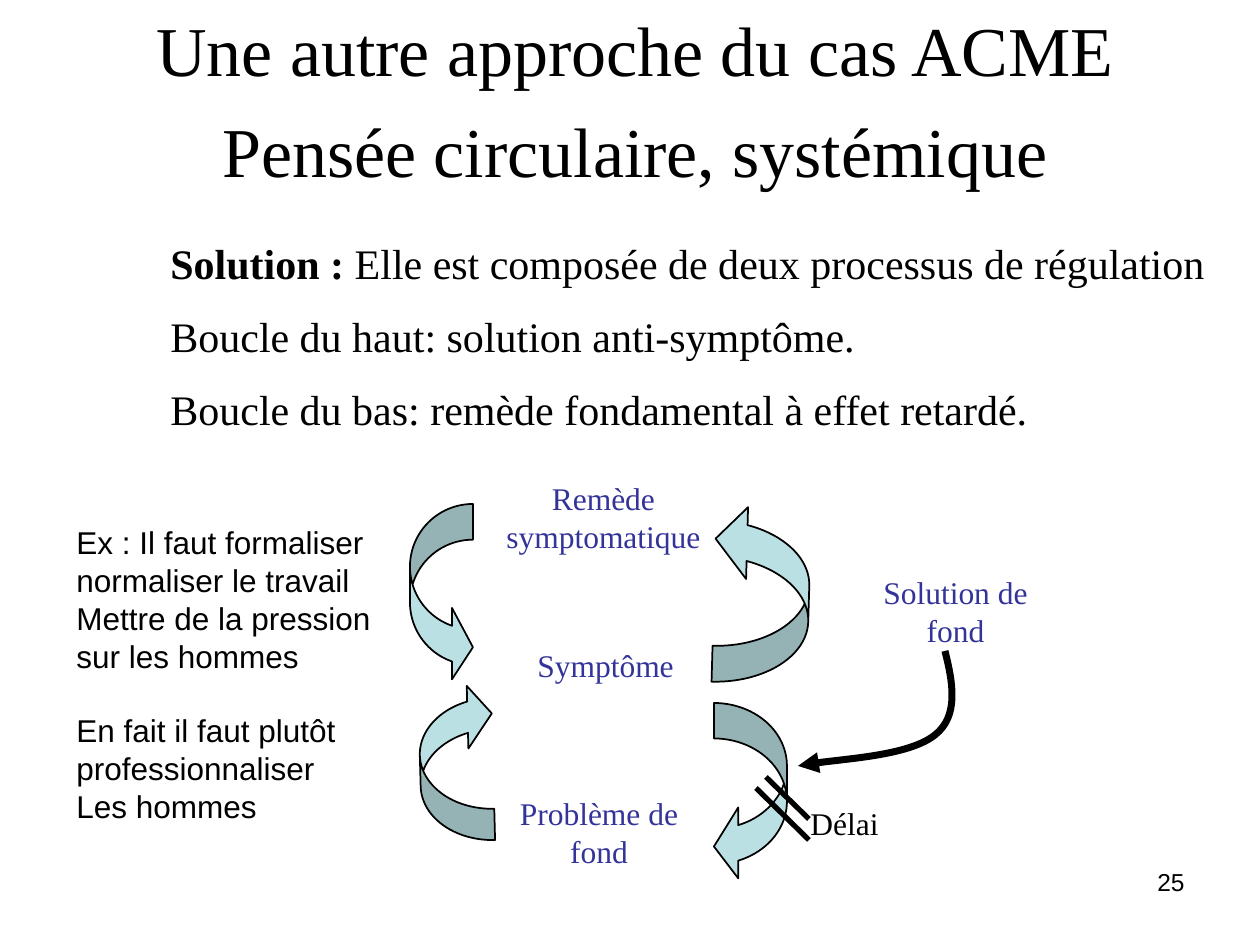
import pptx
import pptx.util
import pptx.dml.color
import pptx.enum.shapes
import pptx.enum.text
import pptx.oxml
import pptx.oxml.ns

SCALE = 914400 / 126  # EMU in one px
COLORS = {"text": "000000", "label": "333399", "arrow": "BBE0E3", "background": "FFFFFF"}
SERIF, SANS = "Times New Roman", "Arial"
ALIGN = pptx.enum.text.PP_ALIGN
SHAPE = pptx.enum.shapes.MSO_SHAPE

# Content: places are left, top, width, height in px
TITLE = ["Une autre approche du cas ACME", "Pensée circulaire, systémique"]
TITLE_PLACE = (35, 0, 1200, 158)

SOLUTION = [
    [("Solution :", True), (" Elle est composée de deux processus de régulation", False)],
    [("Boucle du haut: solution anti-symptôme.", False)],
    [("Boucle du bas: remède fondamental à effet retardé.", False)],
]
SOLUTION_PLACE = (158, 231, 1102, 214)

LABELS = [
    ("Symptôme", (525, 640, 189, 50), ALIGN.LEFT, "label"),
    ("Remède symptomatique", (451, 473, 305, 88), ALIGN.CENTER, "label"),
    ("Problème de fond", (494, 788, 210, 88), ALIGN.CENTER, "label"),
    ("Solution de fond", (840, 567, 231, 88), ALIGN.CENTER, "label"),
    ("Délai", (798, 798, 158, 50), ALIGN.LEFT, "text"),
]

EXAMPLE_GROUPS = [
    ["Ex : Il faut formaliser", "normaliser le travail",
     "Mettre de la pression", "sur les hommes"],
    ["En fait il faut plutôt", "professionnaliser", "Les hommes"],
]
EXAMPLE_PLACE = (64, 517, 323, 318)
NUMBER, NUMBER_PLACE = "25", (903, 861, 294, 66)

# Kind, place, rotation, adjustments
LOOP_ARROWS = [
    (SHAPE.CURVED_RIGHT_ARROW, (714, 504, 95, 179), 181.6, (0.378, 0.756, 0.333)),
    (SHAPE.CURVED_LEFT_ARROW, (420, 683, 73, 158), 178.5, (0.429, 0.857, 0.333)),
    (SHAPE.CURVED_RIGHT_ARROW, (410, 504, 63, 179), 0, (0.567, 1.133, 0.333)),
    (SHAPE.CURVED_LEFT_ARROW, (714, 703, 73, 179), 0, (0.486, 0.971, 0.333)),
]
DELAY_MARKS = [(756, 788, 809, 840), (766, 777, 809, 819)]
# Start point, then two control points and an end point for each curve
SOLUTION_CURVE = [(945, 651), (953, 683), (959, 716), (935, 735),
                  (910, 755), (820, 761), (798, 766)]


def emu(*lengths):
    return [pptx.util.Emu(round(length * SCALE)) for length in lengths]


def color(name):
    return pptx.dml.color.RGBColor.from_string(COLORS[name])


def set_line(shape, width):
    shape.line.color.rgb = color("text")
    shape.line.width = pptx.util.Pt(width)


def write(frame, paragraphs, size, font, color_name="text", align=ALIGN.LEFT, gap=0):
    """Each paragraph is a string or a list of (text, bold) runs."""
    for index, content in enumerate(paragraphs):
        paragraph = frame.paragraphs[0] if index == 0 else frame.add_paragraph()
        paragraph.alignment = align
        paragraph.font.size = pptx.util.Pt(size)
        paragraph.font.name = font
        paragraph.font.color.rgb = color(color_name)
        paragraph.space_before = pptx.util.Pt(gap if index else 0)
        for text, bold in [(content, False)] if isinstance(content, str) else content:
            run = paragraph.add_run()
            run.text = text
            if bold:
                run.font.bold = True


def add_text(slide, place, paragraphs, size, font, wrap=True, grow=True, **options):
    frame = slide.shapes.add_textbox(*emu(*place)).text_frame
    frame.word_wrap = wrap
    if grow:
        frame.auto_size = pptx.enum.text.MSO_AUTO_SIZE.SHAPE_TO_FIT_TEXT
    write(frame, paragraphs, size, font, **options)
    return frame


def add_curve(slide, points):
    builder = slide.shapes.build_freeform(*points[0], scale=SCALE)
    builder.add_line_segments(points[1:], close=False)
    shape = builder.convert_to_shape()
    # Turn every three straight segments into one Bézier curve
    qn = pptx.oxml.ns.qn
    segments = list(shape.element.iter(qn("a:lnTo")))
    for first in range(0, len(segments), 3):
        curve = pptx.oxml.parse_xml(f"<a:cubicBezTo {pptx.oxml.ns.nsdecls('a')}/>")
        segments[first].addprevious(curve)
        for segment in segments[first:first + 3]:
            curve.append(segment[0])
            segment.getparent().remove(segment)
    shape.fill.background()
    shape.shadow.inherit = False
    set_line(shape, 4)
    shape.line._get_or_add_ln().append(pptx.oxml.parse_xml(
        f"<a:tailEnd {pptx.oxml.ns.nsdecls('a')} type='triangle'/>"))


def main():
    presentation = pptx.Presentation()
    presentation.slide_width, presentation.slide_height = emu(1260, 945)
    slide = presentation.slides.add_slide(presentation.slide_layouts[5])
    slide.background.fill.solid()
    slide.background.fill.fore_color.rgb = color("background")

    # Title
    title = slide.shapes.title
    title.left, title.top, title.width, title.height = emu(*TITLE_PLACE)
    title.text_frame.auto_size = pptx.enum.text.MSO_AUTO_SIZE.NONE
    title.text_frame.vertical_anchor = pptx.enum.text.MSO_ANCHOR.TOP
    write(title.text_frame, TITLE, 40, SERIF, align=ALIGN.CENTER, gap=10)

    # Loop arrows
    for kind, place, rotation, adjustments in LOOP_ARROWS:
        arrow = slide.shapes.add_shape(kind, *emu(*place))
        arrow.rotation = rotation
        for index, value in enumerate(adjustments):
            arrow.adjustments[index] = value
        arrow.fill.solid()
        arrow.fill.fore_color.rgb = color("arrow")
        arrow.shadow.inherit = False
        set_line(arrow, 1)

    # Curve from the solution to the delayed loop, and the delay marks
    add_curve(slide, SOLUTION_CURVE)
    for ends in DELAY_MARKS:
        mark = slide.shapes.add_connector(
            pptx.enum.shapes.MSO_CONNECTOR.STRAIGHT, *emu(*ends))
        set_line(mark, 3)
        mark.element.spPr.append(pptx.oxml.parse_xml(
            f"<a:effectLst {pptx.oxml.ns.nsdecls('a')}/>"))

    # Texts
    for text, place, align, color_name in LABELS:
        add_text(slide, place, [text], 18, SERIF, color_name=color_name, align=align)
    add_text(slide, SOLUTION_PLACE, SOLUTION, 24, SERIF, gap=13)
    example = add_text(slide, EXAMPLE_PLACE, sum(EXAMPLE_GROUPS, []), 18, SANS, wrap=False)
    example.paragraphs[len(EXAMPLE_GROUPS[0])].space_before = pptx.util.Pt(21)
    add_text(slide, NUMBER_PLACE, [NUMBER], 14, SANS, grow=False, align=ALIGN.RIGHT)

    presentation.save("out.pptx")


if __name__ == "__main__":
    main()
